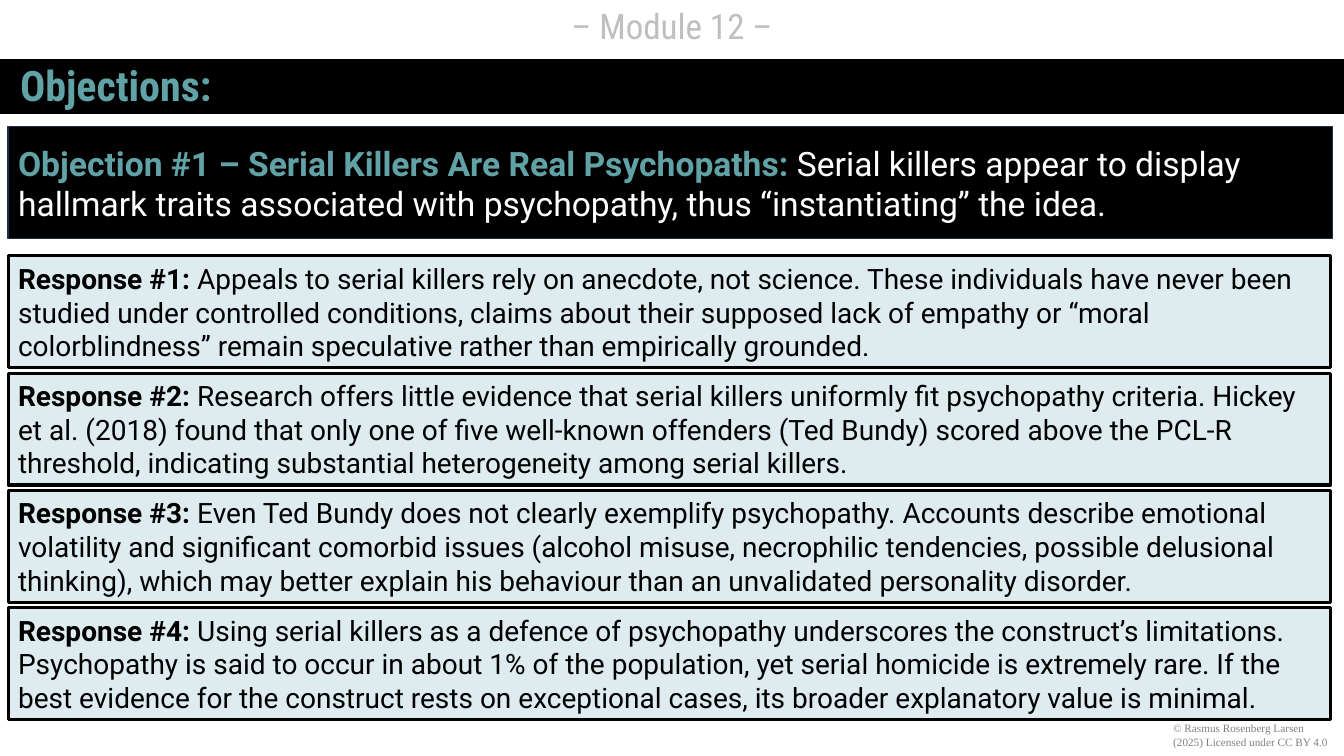
from pptx import Presentation
from pptx.dml.color import RGBColor
from pptx.enum.shapes import MSO_SHAPE
from pptx.enum.text import MSO_ANCHOR, PP_ALIGN
from pptx.util import Pt

BLACK = RGBColor(0x00, 0x00, 0x00)
WHITE = RGBColor(0xFF, 0xFF, 0xFF)
TEAL = RGBColor(0x61, 0xA2, 0xA7)
PALE_TEAL = RGBColor(0xDE, 0xEC, 0xEF)
NAVY = RGBColor(0x20, 0x2D, 0x4B)
LIGHT_GREY = RGBColor(0xBF, 0xBF, 0xBF)
GREY = RGBColor(0x80, 0x80, 0x80)

prs = Presentation()
prs.slide_width = Pt(960)
prs.slide_height = Pt(540)
slide = prs.slides.add_slide(prs.slide_layouts[6])


def add_panel(left, top, width, height, fill, line, line_width):
    panel = slide.shapes.add_shape(
        MSO_SHAPE.RECTANGLE, Pt(left), Pt(top), Pt(width), Pt(height))
    panel.shadow.inherit = False
    panel.fill.solid()
    panel.fill.fore_color.rgb = fill
    panel.line.color.rgb = line
    panel.line.width = Pt(line_width)
    panel.text_frame.word_wrap = True
    panel.text_frame.vertical_anchor = MSO_ANCHOR.MIDDLE
    panel.text_frame.paragraphs[0].alignment = PP_ALIGN.LEFT
    return panel


def add_run(box, text, size, font, color, bold=False):
    run = box.text_frame.paragraphs[0].add_run()
    run.text = text
    run.font.size = Pt(size)
    run.font.name = font
    run.font.color.rgb = color
    run.font.bold = bold


# Module heading
module = slide.shapes.add_textbox(Pt(0), Pt(0), Pt(960), Pt(37.4))
module.text_frame.word_wrap = True
module.text_frame.paragraphs[0].alignment = PP_ALIGN.CENTER
add_run(module, "– Module 12 –", 25, "Roboto Condensed", LIGHT_GREY)

# Title on its black band
add_panel(0, 42.5, 960, 38.2, BLACK, BLACK, 1)
title = slide.shapes.add_textbox(Pt(7.2), Pt(33.8), Pt(946.8), Pt(58.3))
title.text_frame.word_wrap = True
title.text_frame.vertical_anchor = MSO_ANCHOR.MIDDLE
title.text_frame.paragraphs[0].line_spacing = 0.9
add_run(title, "Objections:", 30, "Roboto Condensed", TEAL, True)

# Objection
objection = add_panel(5.8, 90.6, 946, 80, BLACK, NAVY, 1)
add_run(objection, "Objection #1 – Serial Killers Are Real Psychopaths:",
        24, "Roboto", TEAL, True)
add_run(objection, " Serial killers appear to display hallmark traits associated "
        "with psychopathy, thus “instantiating” the idea.", 24, "Roboto", WHITE)

# Responses, stacked at an equal pitch
RESPONSES = [
    "Appeals to serial killers rely on anecdote, not science. These individuals "
    "have never been studied under controlled conditions, claims about their "
    "supposed lack of empathy or “moral colorblindness” remain speculative "
    "rather than empirically grounded.",
    "Research offers little evidence that serial killers uniformly fit "
    "psychopathy criteria. Hickey et al. (2018) found that only one of five "
    "well-known offenders (Ted Bundy) scored above the PCL-R threshold, "
    "indicating substantial heterogeneity among serial killers.",
    "Even Ted Bundy does not clearly exemplify psychopathy. Accounts describe "
    "emotional volatility and significant comorbid issues (alcohol misuse, "
    "necrophilic tendencies, possible delusional thinking), which may better "
    "explain his behaviour than an unvalidated personality disorder.",
    "Using serial killers as a defence of psychopathy underscores the "
    "construct’s limitations. Psychopathy is said to occur in about 1% of the "
    "population, yet serial homicide is extremely rare. If the best evidence "
    "for the construct rests on exceptional cases, its broader explanatory "
    "value is minimal.",
]
for index, reply in enumerate(RESPONSES):
    response = add_panel(5.8, 182.8 + index * 83.7, 944.6, 80,
                         PALE_TEAL, BLACK, 2.25)
    add_run(response, f"Response #{index + 1}:", 20, "Roboto", BLACK, True)
    add_run(response, f" {reply}", 20, "Roboto", BLACK)

# Copyright line
copyright_line = slide.shapes.add_textbox(Pt(830.9), Pt(511.9), Pt(129), Pt(26.6))
copyright_line.text_frame.word_wrap = True
add_run(copyright_line, "© Rasmus Rosenberg Larsen (2025) Licensed under CC BY 4.0",
        8, "Times New Roman", GREY)

prs.save("out.pptx")
